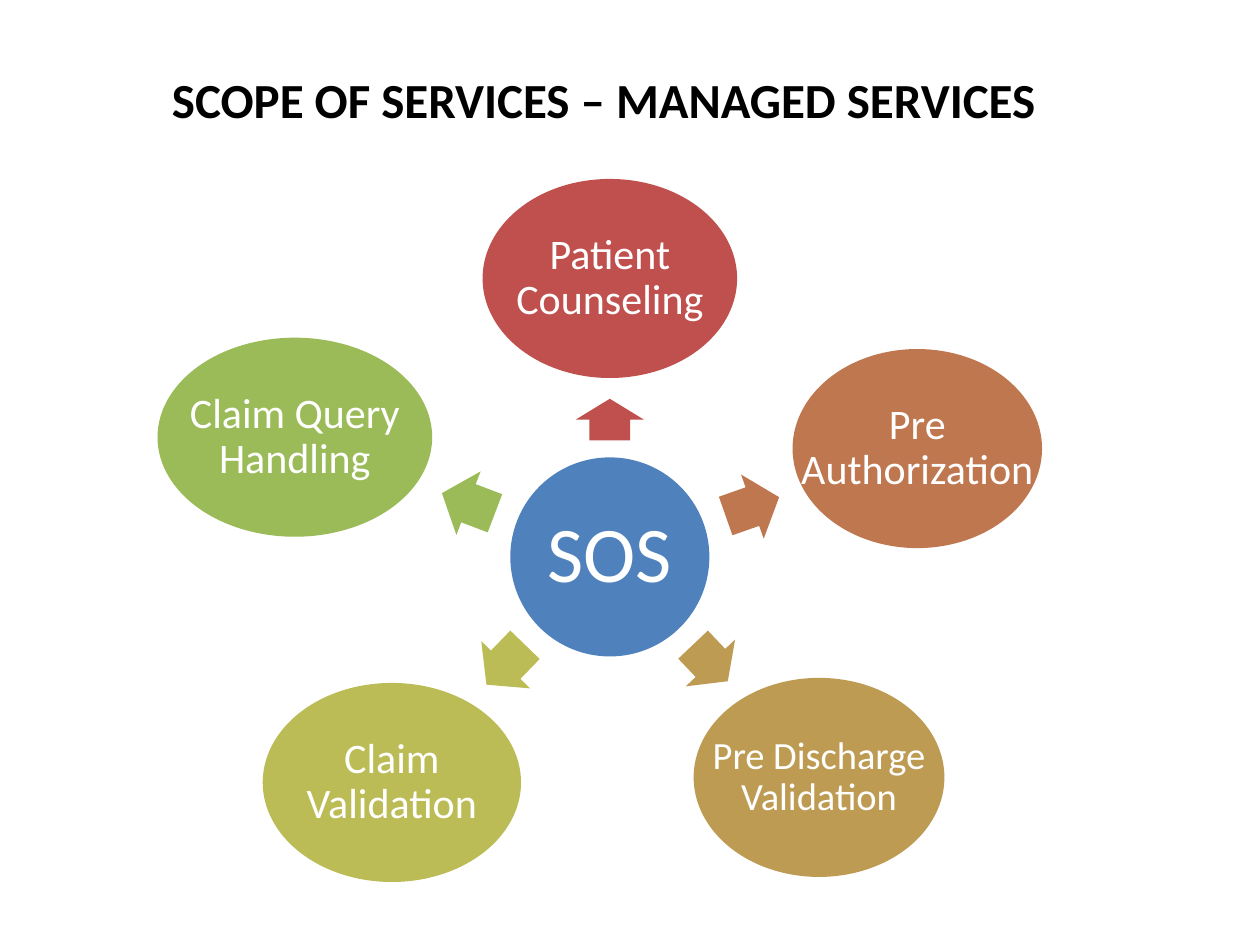
from math import atan2, cos, degrees, hypot, sin

from pptx import Presentation
from pptx.dml.color import RGBColor
from pptx.enum.shapes import MSO_SHAPE
from pptx.enum.text import MSO_ANCHOR, PP_ALIGN
from pptx.util import Inches, Pt

BLACK = RGBColor(0x00, 0x00, 0x00)
WHITE = RGBColor(0xFF, 0xFF, 0xFF)
BLUE = RGBColor(0x4F, 0x81, 0xBD)
RED = RGBColor(0xC0, 0x50, 0x4D)
RUST = RGBColor(0xBF, 0x77, 0x50)
OCHRE = RGBColor(0xBD, 0x9B, 0x53)
OLIVE = RGBColor(0xBC, 0xBC, 0x56)
GREEN = RGBColor(0x9B, 0xBB, 0x59)

FONT = "Calibri"
OVAL_HEIGHT = 1.58
ARROW_WIDTH = 0.54
HUB_CENTER = (4.84, 4.42)

# label, colour, text size, centre, oval width, arrow length, hub-to-arrow distance
SERVICES = [
    ("Patient Counseling", RED, 24, (4.84, 2.21), 2.02, 0.33, 1.09),
    ("Pre Authorization", RUST, 24, (7.28, 3.56), 1.98, 0.45, 1.2),
    ("Pre Discharge Validation", OCHRE, 22, (6.5, 6.17), 1.99, 0.4, 1.16),
    ("Claim Validation", OLIVE, 24, (3.11, 6.21), 2.05, 0.44, 1.19),
    ("Claim Query Handling", GREEN, 24, (2.34, 3.47), 2.18, 0.45, 1.2),
]


def centered_box(center, width, height):
    """Return left, top, width and height of a box around a centre in inches."""
    x, y = center
    return [Inches(n) for n in (x - width / 2, y - height / 2, width, height)]


def add_filled_shape(page, kind, box, color):
    shape = page.shapes.add_shape(kind, *box)
    shape.shadow.inherit = False
    shape.fill.solid()
    shape.fill.fore_color.rgb = color
    shape.line.fill.background()
    return shape


def add_label(page, box, text, size, color, bold=False):
    frame = page.shapes.add_textbox(*box).text_frame
    frame.word_wrap = True
    para = frame.paragraphs[0]
    para.alignment = PP_ALIGN.CENTER
    span = para.add_run()
    span.text = text
    span.font.name = FONT
    span.font.size = Pt(size)
    span.font.bold = bold
    span.font.color.rgb = color
    return frame


def add_oval(page, box, text, size, color, inset):
    """Add an oval whose label may use its full width."""
    add_filled_shape(page, MSO_SHAPE.OVAL, box, color)
    frame = add_label(page, box, text, size, WHITE)
    frame.vertical_anchor = MSO_ANCHOR.MIDDLE
    frame.margin_left = frame.margin_right = Inches(inset)
    frame.margin_top = frame.margin_bottom = Inches(inset)
    frame.paragraphs[0].line_spacing = 0.9


def add_arrow(page, target, length, distance, color):
    """Add an arrow that points from the hub towards the target."""
    hub_x, hub_y = HUB_CENTER
    angle = atan2(target[1] - hub_y, target[0] - hub_x)
    center = (hub_x + distance * cos(angle), hub_y + distance * sin(angle))
    box = centered_box(center, length, ARROW_WIDTH)
    arrow = add_filled_shape(page, MSO_SHAPE.RIGHT_ARROW, box, color)
    arrow.adjustments[0] = 0.6
    arrow.adjustments[1] = 0.5
    arrow.rotation = degrees(angle) % 360


def add_service_wheel(page):
    hub_box = centered_box(HUB_CENTER, OVAL_HEIGHT, OVAL_HEIGHT)
    add_oval(page, hub_box, "SOS", 45, BLUE, 0.06)
    for label, color, size, center, width, length, distance in SERVICES:
        add_arrow(page, center, length, distance, color)
        box = centered_box(center, width, OVAL_HEIGHT)
        add_oval(page, box, label, size, color, 0.03)


def main():
    deck = Presentation()
    deck.slide_width, deck.slide_height = Inches(10), Inches(7.5)
    page = deck.slides.add_slide(deck.slide_layouts[6])
    add_service_wheel(page)
    title_box = [Inches(n) for n in (0.5, 0.5, 8.58, 0.57)]
    add_label(page, title_box, "SCOPE OF SERVICES – MANAGED SERVICES", 28, BLACK, bold=True)
    deck.save("out.pptx")


if __name__ == "__main__":
    main()
